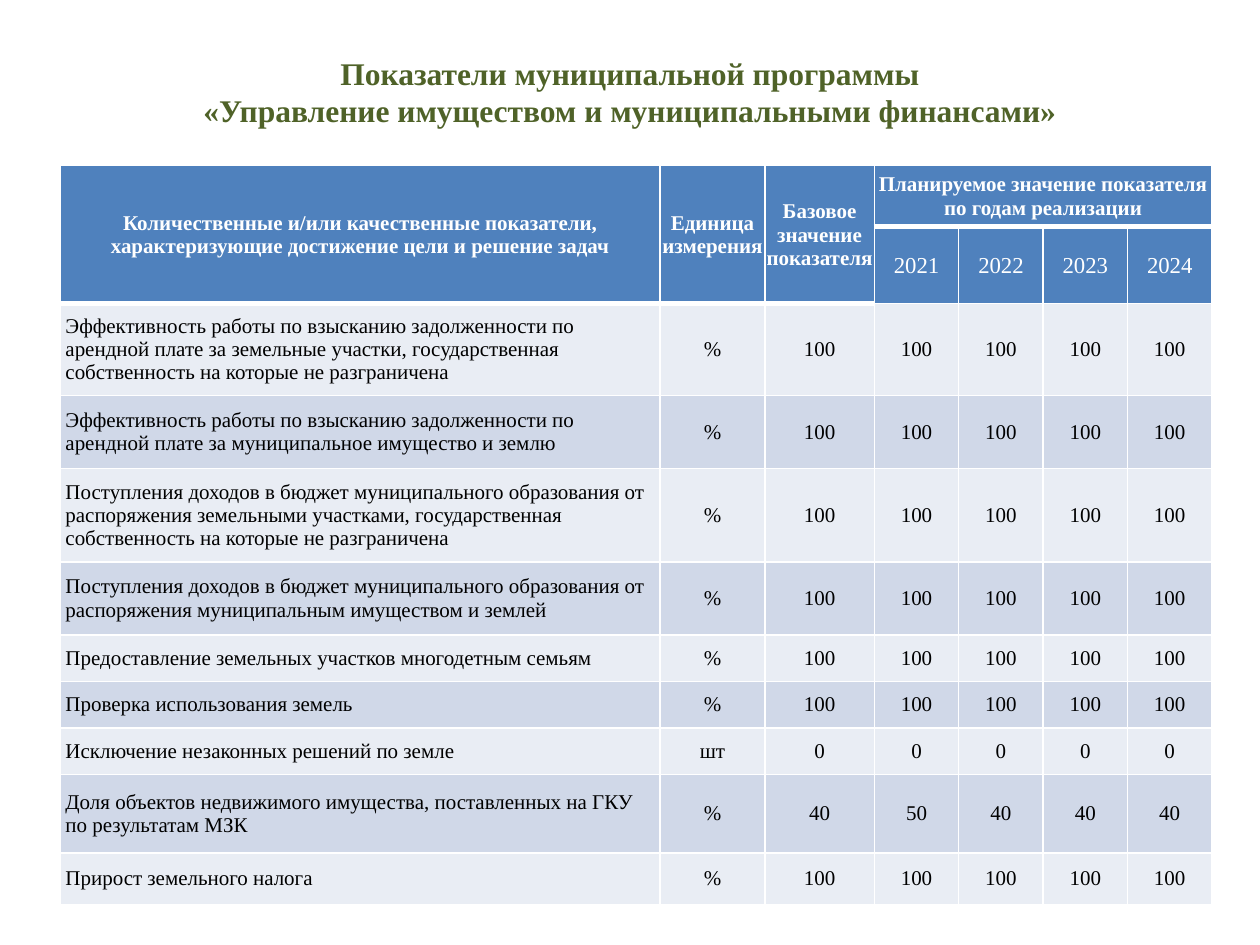
from lxml import etree
from pptx import Presentation
from pptx.dml.color import RGBColor
from pptx.enum.text import MSO_ANCHOR, PP_ALIGN
from pptx.oxml.ns import qn
from pptx.util import Inches, Pt

LEFT, CENTER = PP_ALIGN.LEFT, PP_ALIGN.CENTER
MIDDLE = MSO_ANCHOR.MIDDLE
FONT = "Times New Roman"

WHITE = RGBColor(0xFF, 0xFF, 0xFF)
BLACK = RGBColor(0x00, 0x00, 0x00)
GREEN = RGBColor(0x4F, 0x62, 0x28)
BLUE = RGBColor(0x4F, 0x81, 0xBD)
BANDS = (RGBColor(0xE9, 0xED, 0xF4), RGBColor(0xD0, 0xD8, 0xE8))

TITLE = "Показатели муниципальной программы\v«Управление имуществом и муниципальными финансами»"
HEADERS = [
    "Количественные и/или качественные показатели, характеризующие достижение цели и решение задач",
    "Единица измерения",
    "Базовое значение показателя",
    "Планируемое значение показателя по годам реализации",
]
YEARS = ["2021", "2022", "2023", "2024"]
FULL = ["100"] * 5

# Row height, indicator, unit, base value and yearly values
INDICATORS = [
    (0.73, "Эффективность работы по взысканию задолженности по арендной плате за земельные участки, "
           "государственная собственность на которые не разграничена", "%", FULL),
    (0.58, "Эффективность работы по взысканию задолженности по арендной плате "
           "за муниципальное имущество и землю", "%", FULL),
    (0.74, "Поступления доходов в бюджет муниципального образования от распоряжения земельными "
           "участками, государственная собственность на которые не разграничена", "%", FULL),
    (0.58, "Поступления доходов в бюджет муниципального образования от распоряжения "
           "муниципальным имуществом и землей", "%", FULL),
    (0.37, "Предоставление земельных участков многодетным семьям", "%", FULL),
    (0.37, "Проверка использования земель", "%", FULL),
    (0.37, "Исключение незаконных решений по земле", "шт", ["0"] * 5),
    (0.62, "Доля объектов недвижимого имущества, поставленных на ГКУ по результатам МЗК", "%",
     ["40", "50", "40", "40", "40"]),
    (0.41, "Прирост земельного налога", "%", FULL),
]
HEADER_HEIGHTS = [0.49, 0.56]
COLUMN_WIDTHS = [4.76, 0.83, 0.87] + [0.67] * len(YEARS)


def format_text(tf, text, size, color, bold=False, align=CENTER):
    tf.text = text
    p = tf.paragraphs[0]
    p.alignment = align
    p.font.name = FONT
    p.font.size = Pt(size)
    p.font.bold = bold
    p.font.color.rgb = color


def style_cell(cell, fill, bottom=1):
    """White borders first, then the fill, as the schema orders them."""
    tcPr = cell._tc.get_or_add_tcPr()
    for tag, width in (("a:lnL", 1), ("a:lnR", 1), ("a:lnT", 1), ("a:lnB", bottom)):
        ln = etree.SubElement(tcPr, qn(tag), w=str(Pt(width)))
        solid = etree.SubElement(ln, qn("a:solidFill"))
        etree.SubElement(solid, qn("a:srgbClr"), val=str(WHITE))
    cell.fill.solid()
    cell.fill.fore_color.rgb = fill


def write_cell(cell, text, size=12, color=BLACK, bold=False, align=CENTER, side=0.04, top=0):
    cell.margin_left = cell.margin_right = Inches(side)
    cell.margin_top, cell.margin_bottom = Inches(top), 0
    cell.vertical_anchor = MIDDLE
    format_text(cell.text_frame, text, size, color, bold, align)


def add_title(s, left, top, width, height):
    sp = s.shapes.add_textbox(Inches(left), Inches(top), Inches(width), Inches(height))
    tf = sp.text_frame
    tf.word_wrap = True
    tf.vertical_anchor = MIDDLE
    format_text(tf, TITLE, 18, GREEN, bold=True)


def add_indicator_table(s, left, top, width, height):
    heights = HEADER_HEIGHTS + [row[0] for row in INDICATORS]
    table = s.shapes.add_table(len(heights), len(COLUMN_WIDTHS), Inches(left), Inches(top),
                               Inches(width), Inches(height)).table
    for column, w in zip(table.columns, COLUMN_WIDTHS):
        column.width = Inches(w)
    for row, h in zip(table.rows, heights):
        row.height = Inches(h)

    # Header: three tall cells, and one wide cell above the years
    first_year = len(HEADERS) - 1
    for r in range(2):
        for c in range(len(COLUMN_WIDTHS)):
            style_cell(table.cell(r, c), BLUE, bottom=3 if r == 0 or c < first_year else 1)
    for c, text in enumerate(HEADERS):
        cell = table.cell(0, c)
        cell.merge(table.cell(1, c) if c < first_year else table.cell(0, len(COLUMN_WIDTHS) - 1))
        write_cell(cell, text, color=WHITE, bold=True, side=0.01, top=0.01)
    for c, year in enumerate(YEARS, first_year):
        write_cell(table.cell(1, c), year, 13, WHITE, side=0.01, top=0.01)

    # Indicators in alternating bands
    for i, (_, name, unit, values) in enumerate(INDICATORS):
        for c, text in enumerate([name, unit, *values]):
            cell = table.cell(i + len(HEADER_HEIGHTS), c)
            style_cell(cell, BANDS[i % 2])
            write_cell(cell, text, align=CENTER if c else LEFT)


def main():
    prs = Presentation()
    prs.slide_width, prs.slide_height = Inches(10), Inches(7.5)
    s = prs.slides.add_slide(prs.slide_layouts[6])
    add_title(s, 0.51, 0.29, 8.98, 0.87)
    add_indicator_table(s, 0.48, 1.31, 9.13, 5.82)
    prs.save("out.pptx")


if __name__ == "__main__":
    main()
